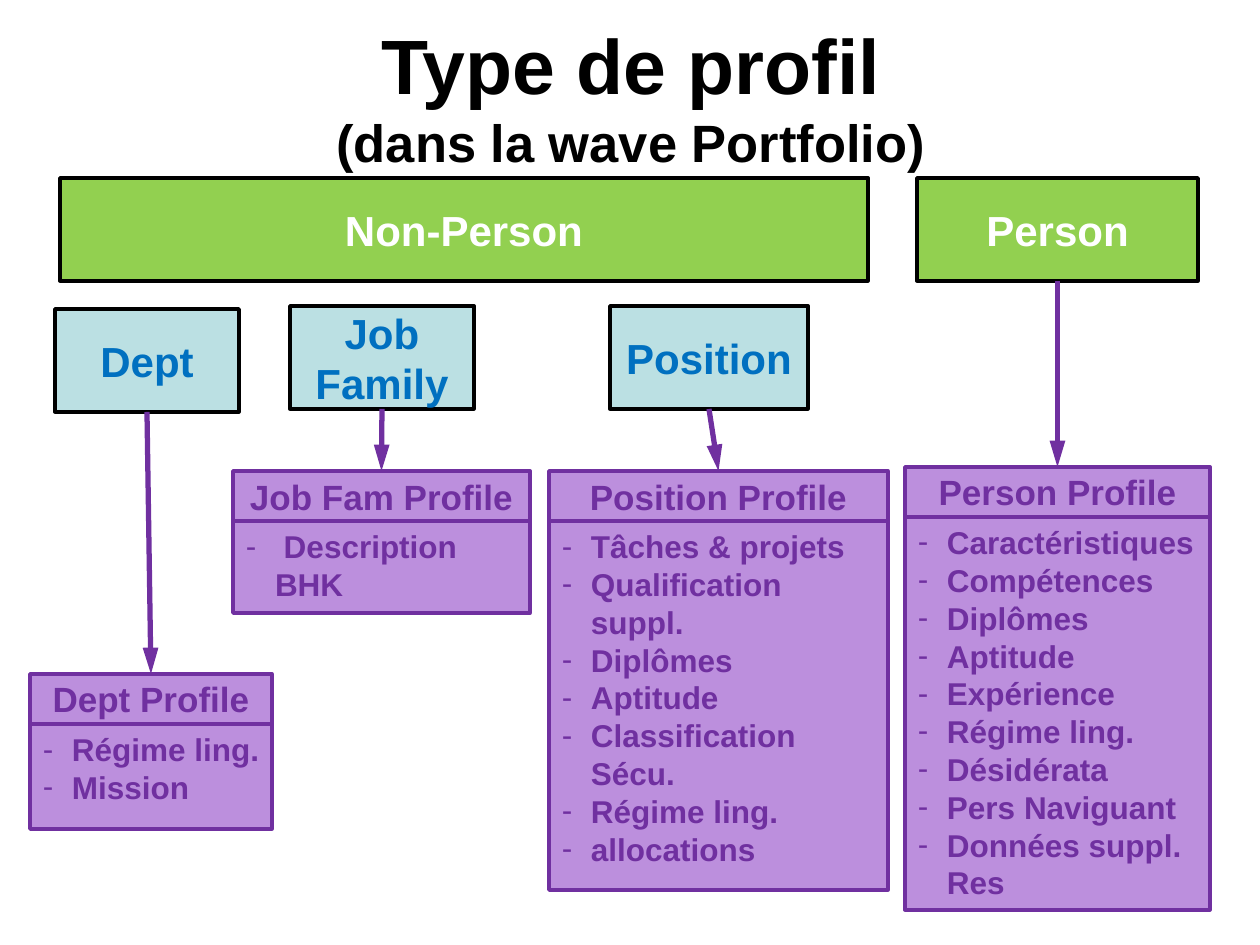
from pptx import Presentation
from pptx.dml.color import RGBColor
from pptx.enum.shapes import MSO_CONNECTOR, MSO_SHAPE
from pptx.enum.text import MSO_ANCHOR, PP_ALIGN
from pptx.oxml.ns import qn
from pptx.util import Pt
from lxml import etree

RECT = MSO_SHAPE.RECTANGLE
LINE = MSO_CONNECTOR.STRAIGHT
LEFT, MID = PP_ALIGN.LEFT, PP_ALIGN.CENTER
TOP, CORE = MSO_ANCHOR.TOP, MSO_ANCHOR.MIDDLE

SCALE = 914400 / 126
HEAD, BAR = 103, 50
INK = {
    "black": "000000",
    "white": "FFFFFF",
    "green": "92D050",
    "pale": "BBE0E3",
    "blue": "0070C0",
    "lilac": "BC8FDD",
    "plum": "7030A0",
}

TREE = [
    {
        "name": "Dept", "top": (55, 309, 184),
        "title": "Dept Profile", "bar": (30, 674, 242), "body": 105,
        "items": ["Régime ling.", "Mission"],
    },
    {
        "name": "Job Family", "top": (290, 306, 184),
        "title": "Job Fam Profile", "bar": (233, 471, 297), "body": 92,
        "items": [" Description BHK"],
    },
    {
        "name": "Position", "top": (610, 306, 198),
        "title": "Position Profile", "bar": (549, 471, 339), "body": 369,
        "items": ["Tâches & projets", "Qualification suppl.", "Diplômes",
                  "Aptitude", "Classification Sécu.", "Régime ling.",
                  "allocations"],
    },
    {
        "name": "Person", "top": (917, 178, 281),
        "title": "Person Profile", "bar": (905, 467, 305), "body": 393,
        "items": ["Caractéristiques", "Compétences", "Diplômes", "Aptitude",
                  "Expérience", "Régime ling.", "Désidérata",
                  "Pers Naviguant", "Données suppl. Res"],
        "fill": "green", "color": "white",
    },
]


def px(n):
    return round(n * SCALE)


def rgb(name):
    return RGBColor.from_string(INK[name])


def dash(para):
    props = para._p.get_or_add_pPr()
    props.set("marL", str(px(29)))
    props.set("indent", str(px(-29)))
    font = etree.SubElement(props, qn("a:buFont"))
    font.set("typeface", "Arial")
    mark = etree.SubElement(props, qn("a:buChar"))
    mark.set("char", "-")


def write(frame, lines, size=24, color="black", align=MID, anchor=CORE,
          bullet=False):
    frame.word_wrap = True
    frame.vertical_anchor = anchor
    frame.margin_left, frame.margin_right = px(13), px(11 if bullet else 13)
    for i, line in enumerate(lines):
        para = frame.paragraphs[0] if i == 0 else frame.add_paragraph()
        para.alignment = align
        if bullet:
            dash(para)
        run = para.add_run()
        run.text = line
        style(run.font, size, color)
    return frame.paragraphs[-1]


def style(font, size, color):
    font.name = "Arial"
    font.size = Pt(size)
    font.bold = True
    font.color.rgb = rgb(color)


def box(slide, x, y, w, h, fill, edge, lines, **form):
    shape = slide.shapes.add_shape(RECT, px(x), px(y), px(w), px(h))
    shape.shadow.inherit = False
    shape.fill.solid()
    shape.fill.fore_color.rgb = rgb(fill)
    shape.line.color.rgb = rgb(edge)
    shape.line.width = Pt(2)
    write(shape.text_frame, lines, **form)


def arrow(slide, x1, y1, x2, y2):
    link = slide.shapes.add_connector(LINE, px(x1), px(y1), px(x2), px(y2))
    link.line.color.rgb = rgb("plum")
    link.line.width = Pt(3)
    tail = etree.SubElement(link.line._get_or_add_ln(), qn("a:tailEnd"))
    tail.set("type", "triangle")
    tail.set("w", "med")
    tail.set("len", "lg")
    etree.SubElement(link._element.spPr, qn("a:effectLst"))


def title(slide):
    area = slide.shapes.add_textbox(px(64), px(16), px(1134), px(158))
    para = write(area.text_frame, ["Type de profil"], size=44)
    para.add_line_break()
    run = para.add_run()
    run.text = "(dans la wave Portfolio)"
    style(run.font, 30, "black")


def branch(slide, node):
    x, y, w = node["top"]
    left, top, wide = node["bar"]
    box(slide, x, y, w, HEAD, node.get("fill", "pale"), "black",
        [node["name"]], color=node.get("color", "blue"))
    box(slide, left, top, wide, BAR, "lilac", "plum", [node["title"]],
        size=20, color="plum")
    box(slide, left, top + BAR, wide, node["body"], "lilac", "plum",
        node["items"], size=18, color="plum", align=LEFT, anchor=TOP,
        bullet=True)
    arrow(slide, x + w / 2, y + HEAD, left + wide / 2, top)


def main():
    deck = Presentation()
    deck.slide_width, deck.slide_height = px(1260), px(945)
    slide = deck.slides.add_slide(deck.slide_layouts[6])
    title(slide)
    box(slide, 60, 178, 808, HEAD, "green", "black", ["Non-Person"],
        color="white")
    for node in TREE:
        branch(slide, node)
    deck.save("out.pptx")


if __name__ == "__main__":
    main()
